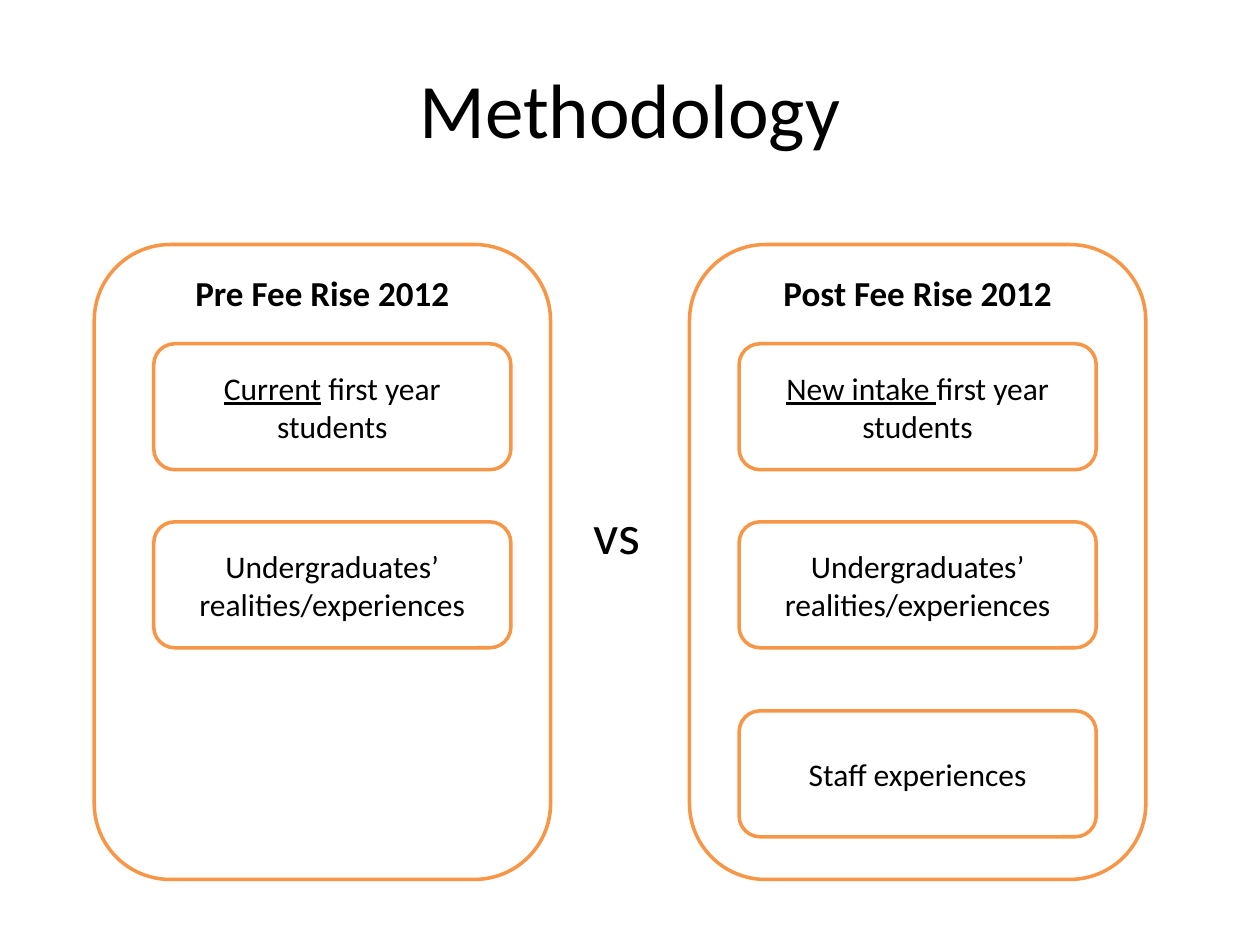
from pptx import Presentation
from pptx.dml.color import RGBColor
from pptx.enum.shapes import MSO_SHAPE
from pptx.enum.text import MSO_ANCHOR, MSO_AUTO_SIZE, PP_ALIGN
from pptx.util import Cm, Pt

ROUNDED = MSO_SHAPE.ROUNDED_RECTANGLE
TOP, MIDDLE = MSO_ANCHOR.TOP, MSO_ANCHOR.MIDDLE
CENTER, LEFT = PP_ALIGN.CENTER, PP_ALIGN.LEFT

COLORS = {"fill": "FFFFFF", "line": "F79646", "text": "000000"}
FONT = "Calibri"

TITLE = "Methodology"
VERSUS = "vs"
REALITIES = [("Undergraduates’ realities/experiences", False)]
PANELS = [
    {
        "heading": "Pre Fee Rise 2012",
        "left": 1.9,
        "box_left": 3.1,
        "boxes": [[("Current", True), (" first year students", False)], REALITIES],
    },
    {
        "heading": "Post Fee Rise 2012",
        "left": 13.9,
        "box_left": 14.9,
        "boxes": [
            [("New intake ", True), ("first year students", False)],
            REALITIES,
            [("Staff experiences", False)],
        ],
    },
]
PANEL_TOP, PANEL_WIDTH, PANEL_HEIGHT = 4.93, 9.2, 12.8
BOX_TOPS = [6.93, 10.52, 14.33]
BOX_WIDTH, BOX_HEIGHT = 7.2, 2.54


def color(name):
    return RGBColor.from_string(COLORS[name])


def write(tf, runs, size, bold=False, align=CENTER, anchor=MIDDLE):
    tf.vertical_anchor = anchor
    p = tf.paragraphs[0]
    p.alignment = align
    p.font.name = FONT
    p.font.size = Pt(size)
    p.font.bold = bold
    p.font.color.rgb = color("text")
    for text, underlined in runs:
        r = p.add_run()
        r.text = text
        if underlined:
            r.font.underline = True


def add_rounded(s, left, top, width, height):
    sp = s.shapes.add_shape(ROUNDED, Cm(left), Cm(top), Cm(width), Cm(height))
    sp.shadow.inherit = False
    sp.fill.solid()
    sp.fill.fore_color.rgb = color("fill")
    sp.line.color.rgb = color("line")
    sp.line.width = Pt(2)
    sp.text_frame.word_wrap = True
    return sp


def add_panel(s, panel):
    sp = add_rounded(s, panel["left"], PANEL_TOP, PANEL_WIDTH, PANEL_HEIGHT)
    sp.text_frame.margin_top = Cm(0.1)
    write(sp.text_frame, [(panel["heading"], False)], 20, bold=True, anchor=TOP)
    for top, runs in zip(BOX_TOPS, panel["boxes"]):
        box = add_rounded(s, panel["box_left"], top, BOX_WIDTH, BOX_HEIGHT)
        write(box.text_frame, runs, 18)


def main():
    prs = Presentation()
    prs.slide_width, prs.slide_height = Cm(25.4), Cm(19.05)
    s = prs.slides.add_slide(prs.slide_layouts[5])

    title = s.shapes.title
    title.left, title.top = Cm(0), Cm(0.43)
    title.width, title.height = Cm(25.4), Cm(3.48)
    write(title.text_frame, [(TITLE, False)], 44)

    for panel in PANELS:
        add_panel(s, panel)

    versus = s.shapes.add_textbox(Cm(11.71), Cm(9.93), Cm(1.5), Cm(1.63))
    tf = versus.text_frame
    tf.word_wrap = False
    tf.auto_size = MSO_AUTO_SIZE.SHAPE_TO_FIT_TEXT
    write(tf, [(VERSUS, False)], 32, align=LEFT, anchor=TOP)

    prs.save("out.pptx")


if __name__ == "__main__":
    main()
